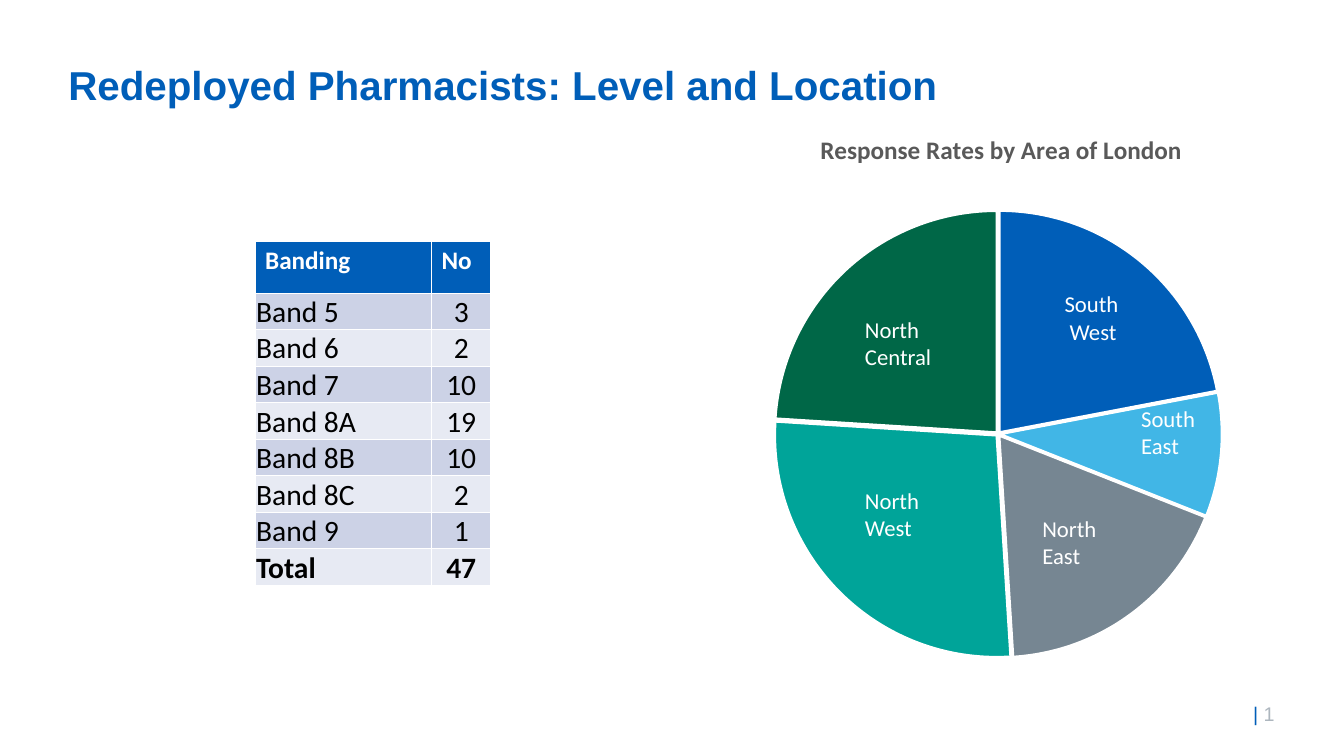
from lxml import etree
from pptx import Presentation
from pptx import util as u
from pptx.chart.data import CategoryChartData
from pptx.dml.color import RGBColor
from pptx.enum import chart as charts, text
from pptx.oxml.ns import qn

COLOURS = {
    "blue": "005EB8", "sky": "41B6E6", "slate": "768692", "teal": "00A499",
    "green": "006747", "white": "FFFFFF", "black": "000000", "title": "595959",
    "number": "ADB6BE", "odd row": "CCD2E6", "even row": "E7EAF3",
}

deck = Presentation()
deck.slide_width, deck.slide_height = u.Inches(13.33), u.Inches(7.5)
page = deck.slides.add_slide(deck.slide_layouts[6])


def area(left, top, width, height):
    """Turn percentages of the slide's size into lengths."""
    sides = (deck.slide_width, deck.slide_height) * 2
    return [round(side * share / 100)
            for side, share in zip(sides, (left, top, width, height))]


def style(font, size, colour, name="Calibri", bold=False):
    font.size, font.name, font.bold = u.Pt(size), name, bold
    font.color.rgb = RGBColor.from_string(COLOURS[colour])


# Slide number
box = page.shapes.add_textbox(*area(92.5, 92.13, 7.05, 4.53))
para = box.text_frame.paragraphs[0]
for words, colour in (("| ", "blue"), ("6", "number")):
    span = para.add_run()
    span.text = words
    style(span.font, 14.1, colour, "Arial")
field = etree.SubElement(para._p, qn("a:fld"), type="slidenum",
                         id="{B6F15528-21DE-4FAA-801E-634DDDAF4B2B}")
field.extend(list(span._r))
para._p.remove(span._r)

# Heading
box = page.shapes.add_textbox(*area(4.35, 8, 91.37, 8.93))
box.text_frame.word_wrap = True
para = box.text_frame.paragraphs[0]
para.text = "Redeployed Pharmacists: Level and Location"
para.line_spacing = 0.9
style(para.runs[0].font, 28.8, "blue", "Arial", True)

# Pie chart
data = CategoryChartData()
data.categories = ["1", "2", "3", "4", "5"]
data.add_series("Series 1", (22, 9, 18, 27, 24))
chart = page.shapes.add_chart(charts.XL_CHART_TYPE.PIE,
                              *area(56.41, 10.93, 35.71, 84.53), data).chart
style(chart.font, 10, "black")
chart.has_legend = False
para = chart.chart_title.text_frame.paragraphs[0]
para.text = "Response Rates by Area of London"
style(para.runs[0].font, 18, "title", bold=True)

plot = chart.plots[0]
plot.vary_by_categories = True
series = plot.series[0]
for index, colour in enumerate(("blue", "sky", "slate", "teal", "green")):
    point = series.points[index].format
    point.fill.solid()
    point.fill.fore_color.rgb = RGBColor.from_string(COLOURS[colour])
    point.line.width = u.Pt(1.5)
    point.line.color.rgb = RGBColor.from_string(COLOURS["white"])
explosion = etree.Element(qn("c:explosion"), val="1")
series._element.find(qn("c:dPt")).addprevious(explosion)

title = chart.chart_title._element
plot_area = plot._element.getparent()
for holder, shares in ((title, {"x": 0.12, "y": 0.07}),
                       (plot_area, {"x": 0.03, "y": 0.2, "w": 0.94, "h": 0.7})):
    for old in holder.findall(qn("c:layout")):
        holder.remove(old)
    layout = etree.Element(qn("c:layout"))
    manual = etree.SubElement(layout, qn("c:manualLayout"))
    if holder is plot_area:
        etree.SubElement(manual, qn("c:layoutTarget"), val="inner")
    for side in ("x", "y"):
        etree.SubElement(manual, qn(f"c:{side}Mode"), val="edge")
    for side, share in shares.items():
        etree.SubElement(manual, qn(f"c:{side}"), val=str(share))
    holder.insert(1 if holder is title else 0, layout)

# Slice labels
labels = (
    ("North East", 76.82, 67.47, 5.7), ("North West", 63.62, 63.73, 6.15),
    ("South East", 84.17, 52.93, 5.93), ("South\nWest", 78.47, 37.73, 8.03),
    ("North\nCentral", 63.62, 41.07, 6.53),
)
for words, left, top, width in labels:
    box = page.shapes.add_textbox(*area(left, top, width, 8.67))
    box.text_frame.word_wrap = True
    box.text_frame.text = words
    for para in box.text_frame.paragraphs:
        style(para.runs[0].font, 16.2, "white")
        if para.text == "West":
            para._p.get_or_add_pPr().set("marL", str(u.Inches(0.05)))

# Banding table
rows = (("Banding", "No"), ("Band 5", "3"), ("Band 6", "2"), ("Band 7", "10"),
        ("Band 8A", "19"), ("Band 8B", "10"), ("Band 8C", "2"), ("Band 9", "1"),
        ("Total", "47"))
table = page.shapes.add_table(len(rows), 2, *area(18.98, 31.87, 17.56, 45.57)).table
for column, share in zip(table.columns, (13.13, 4.43)):
    column.width = round(deck.slide_width * share / 100)
for r, row in enumerate(rows):
    table.rows[r].height = round(deck.slide_height * (4.83 if r else 6.93) / 100)
    for c, words in enumerate(row):
        cell = table.cell(r, c)
        cell.text = words
        cell.fill.solid()
        fill = "blue" if r == 0 else "odd row" if r % 2 else "even row"
        cell.fill.fore_color.rgb = RGBColor.from_string(COLOURS[fill])
        para = cell.text_frame.paragraphs[0]
        if r == 0:
            style(para.runs[0].font, 18, "white", bold=True)
            continue
        style(para.runs[0].font, 21.1, "black", bold=row[0] == "Total")
        cell.vertical_anchor = text.MSO_ANCHOR.BOTTOM
        cell.margin_left = cell.margin_top = cell.margin_right = u.Inches(0.01)
        cell.margin_bottom = 0
        if c == 1:
            para.alignment = text.PP_ALIGN.CENTER

deck.save("out.pptx")
